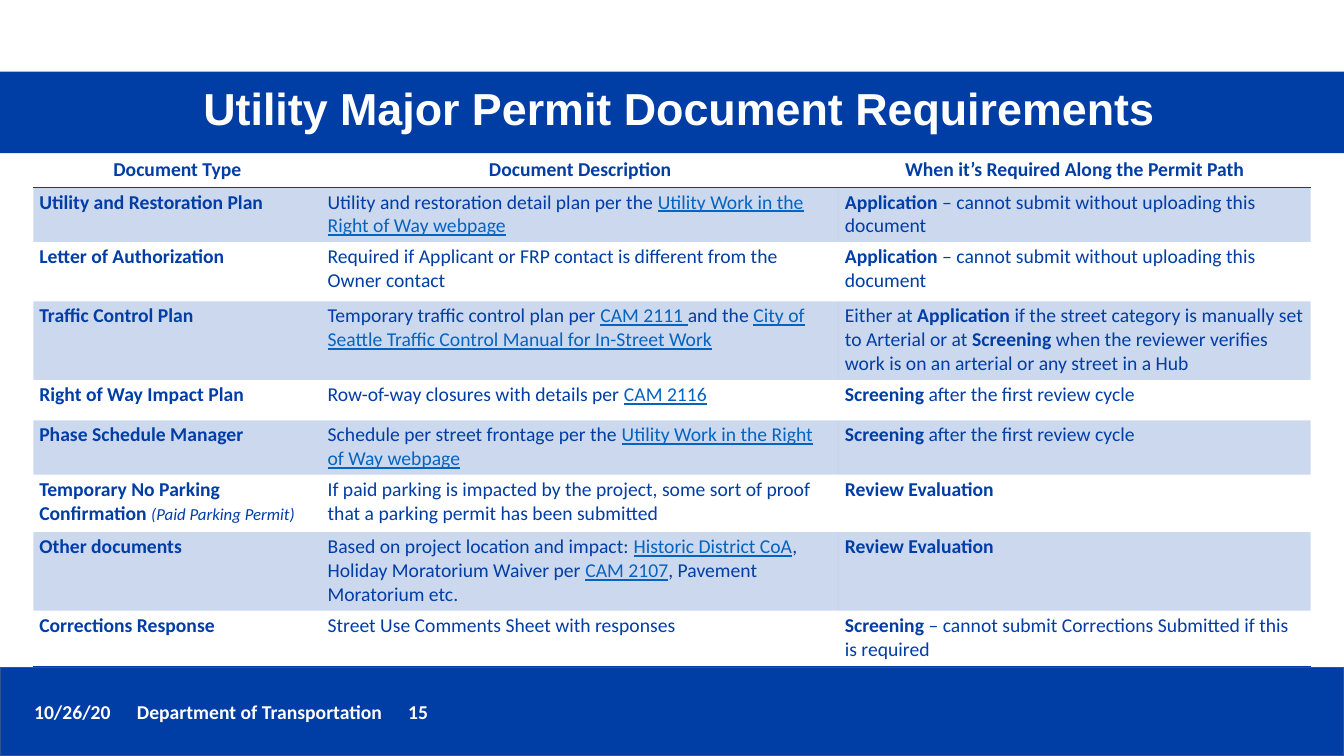
from lxml.etree import SubElement
from pptx import Presentation
from pptx.dml.color import RGBColor
from pptx.enum.shapes import MSO_SHAPE
from pptx.enum.text import MSO_ANCHOR, PP_ALIGN
from pptx.oxml import parse_xml
from pptx.oxml.ns import nsdecls, qn
from pptx.util import Inches, Pt

BLUE = RGBColor(0x00, 0x3D, 0xA5)
LINK_BLUE = RGBColor(0x05, 0x63, 0xC1)
FOOTER_EDGE = RGBColor(0x31, 0x53, 0x8F)
WHITE = RGBColor(0xFF, 0xFF, 0xFF)
NO_GRID_STYLE = "{2D5ABB26-0587-4C30-8999-92F81FD0307C}"

# Run styles: size, colour, bold, italic, underline
PLAIN = (14, BLUE, False, False, False)
BOLD = (14, BLUE, True, False, False)
NOTE = (12, BLUE, False, True, False)
LINK = (14, LINK_BLUE, False, False, True)

COLUMN_WIDTHS = [2.86, 5.13, 4.68]
ROW_HEIGHTS = [0.35, 0.54, 0.59, 0.78, 0.4, 0.54, 0.57, 0.78, 0.55]

HEADINGS = ["Document Type", "Document Description", "When it’s Required Along the Permit Path"]
UPLOAD_FIRST = [("Application", BOLD), (" – cannot submit without uploading this document", PLAIN)]
AFTER_FIRST_REVIEW = [("Screening", BOLD), (" after the first review cycle", PLAIN)]
AT_EVALUATION = [("Review Evaluation", BOLD)]
UTILITY_WEBPAGE = ("Utility Work in the Right of Way webpage", LINK)

DOCUMENTS = [
    ([("Utility and Restoration Plan", BOLD)],
     [("Utility and restoration detail plan per the ", PLAIN), UTILITY_WEBPAGE],
     UPLOAD_FIRST),
    ([("Letter of Authorization", BOLD)],
     [("Required if Applicant or FRP contact is different from the Owner contact", PLAIN)],
     UPLOAD_FIRST),
    ([("Traffic Control Plan", BOLD)],
     [("Temporary traffic control plan per ", PLAIN), ("CAM 2111 ", LINK), ("and the ", PLAIN),
      ("City of Seattle Traffic Control Manual for In-Street Work", LINK)],
     [("Either at ", PLAIN), ("Application", BOLD),
      (" if the street category is manually set to Arterial or at", PLAIN), (" Screening ", BOLD),
      ("when the reviewer verifies work is on an arterial or any street in a Hub", PLAIN)]),
    ([("Right of Way Impact Plan", BOLD)],
     [("Row-of-way closures with details per ", PLAIN), ("CAM 2116", LINK)],
     AFTER_FIRST_REVIEW),
    ([("Phase Schedule Manager", BOLD)],
     [("Schedule per street frontage per the ", PLAIN), UTILITY_WEBPAGE],
     AFTER_FIRST_REVIEW),
    ([("Temporary No Parking Confirmation ", BOLD), ("(Paid Parking Permit)", NOTE)],
     [("If paid parking is impacted by the project, some sort of proof that a parking permit "
       "has been submitted", PLAIN)],
     AT_EVALUATION),
    ([("Other documents", BOLD)],
     [("Based on project location and impact: ", PLAIN), ("Historic District CoA", LINK),
      (", Holiday Moratorium Waiver per ", PLAIN), ("CAM 2107", LINK),
      (", Pavement Moratorium etc.", PLAIN)],
     AT_EVALUATION),
    ([("Corrections Response", BOLD)],
     [("Street Use Comments Sheet with responses", PLAIN)],
     [("Screening", BOLD), (" – cannot submit Corrections Submitted if this is required", PLAIN)]),
]


def add_band(slide, top, height, edge=None):
    """Add a full-width blue band."""
    shape = slide.shapes.add_shape(
        MSO_SHAPE.RECTANGLE, 0, Inches(top), Inches(13.33), Inches(height))
    shape.shadow.inherit = False
    shape.fill.solid()
    shape.fill.fore_color.rgb = BLUE
    if edge is None:
        shape.line.fill.background()
    else:
        shape.line.color.rgb = edge
        shape.line.width = Pt(1)


def add_white_text(slide, left, top, width, height, text, font_name, size):
    """Add a bold white text box and return its paragraph."""
    box = slide.shapes.add_textbox(Inches(left), Inches(top), Inches(width), Inches(height))
    frame = box.text_frame
    frame.word_wrap = True
    frame.vertical_anchor = MSO_ANCHOR.MIDDLE
    frame.text = text
    paragraph = frame.paragraphs[0]
    for run in paragraph.runs:
        run.font.name = font_name
        run.font.size = Pt(size)
        run.font.bold = True
        run.font.color.rgb = WHITE
    return paragraph


def set_tab_stops(paragraph, positions):
    """Place left tab stops, measured from the start of the text."""
    properties = paragraph._p.get_or_add_pPr()
    tab_list = SubElement(properties, qn("a:tabLst"))
    for position in positions:
        SubElement(tab_list, qn("a:tab"), pos=str(Inches(position)), algn="l")


def fill_cell(cell, runs):
    """Write styled runs into a cell with narrow margins."""
    cell.margin_left = cell.margin_right = Inches(0.06)
    cell.margin_top = cell.margin_bottom = Inches(0.03)
    paragraph = cell.text_frame.paragraphs[0]
    for text, (size, color, bold, italic, underline) in runs:
        run = paragraph.add_run()
        run.text = text
        font = run.font
        font.name = "Calibri"
        font.size = Pt(size)
        font.color.rgb = color
        font.bold, font.italic, font.underline = bold, italic, underline


def set_border(cell, side):
    """Draw a blue line on one side of a cell: lnT or lnB."""
    line = parse_xml(
        f'<a:{side} {nsdecls("a")} w="{Pt(1)}"><a:solidFill><a:srgbClr val="{BLUE}"/>'
        f'</a:solidFill></a:{side}>')
    cell._tc.get_or_add_tcPr().insert(0, line)


def shade_cell(cell):
    """Fill a cell with blue at 20 % opacity."""
    cell.fill.solid()
    cell.fill.fore_color.rgb = BLUE
    color = cell._tc.tcPr.find(qn("a:solidFill")).find(qn("a:srgbClr"))
    SubElement(color, qn("a:alpha"), val="20000")


def add_document_table(slide):
    """Add the table with its heading row and shaded alternate rows."""
    rows = [[[(heading, BOLD)] for heading in HEADINGS], *DOCUMENTS]
    frame = slide.shapes.add_table(
        len(rows), len(HEADINGS), Inches(0.33), Inches(1.51),
        Inches(sum(COLUMN_WIDTHS)), Inches(sum(ROW_HEIGHTS)))
    table = frame.table
    table._tbl.tblPr.find(qn("a:tableStyleId")).text = NO_GRID_STYLE
    for column, width in zip(table.columns, COLUMN_WIDTHS):
        column.width = Inches(width)
    for row, height in zip(table.rows, ROW_HEIGHTS):
        row.height = Inches(height)

    for row_index, contents in enumerate(rows):
        for column_index, runs in enumerate(contents):
            cell = table.cell(row_index, column_index)
            fill_cell(cell, runs)
            if row_index in (0, len(rows) - 1):
                set_border(cell, "lnB")
            if row_index == 0:
                set_border(cell, "lnT")
                cell.vertical_anchor = MSO_ANCHOR.MIDDLE
                cell.text_frame.paragraphs[0].alignment = PP_ALIGN.CENTER
            if row_index % 2:
                shade_cell(cell)


def main():
    presentation = Presentation()
    presentation.slide_width = Inches(13.33)
    presentation.slide_height = Inches(7.5)
    slide = presentation.slides.add_slide(presentation.slide_layouts[6])

    # Footer
    add_band(slide, 6.62, 0.88, FOOTER_EDGE)
    footer = add_white_text(slide, 0.24, 6.89, 10.06, 0.34,
                            "10/26/20\tDepartment of Transportation\t15", "Calibri", 14)
    set_tab_stops(footer, [1.02, 3.71])

    # Title
    add_band(slide, 0.71, 0.81)
    title = add_white_text(slide, 0.61, 0.7, 12.26, 0.81,
                           "Utility Major Permit Document Requirements", "Arial", 32)
    title.alignment = PP_ALIGN.CENTER
    title.line_spacing = 0.9

    # Required documents
    add_document_table(slide)

    presentation.save("out.pptx")


if __name__ == "__main__":
    main()
